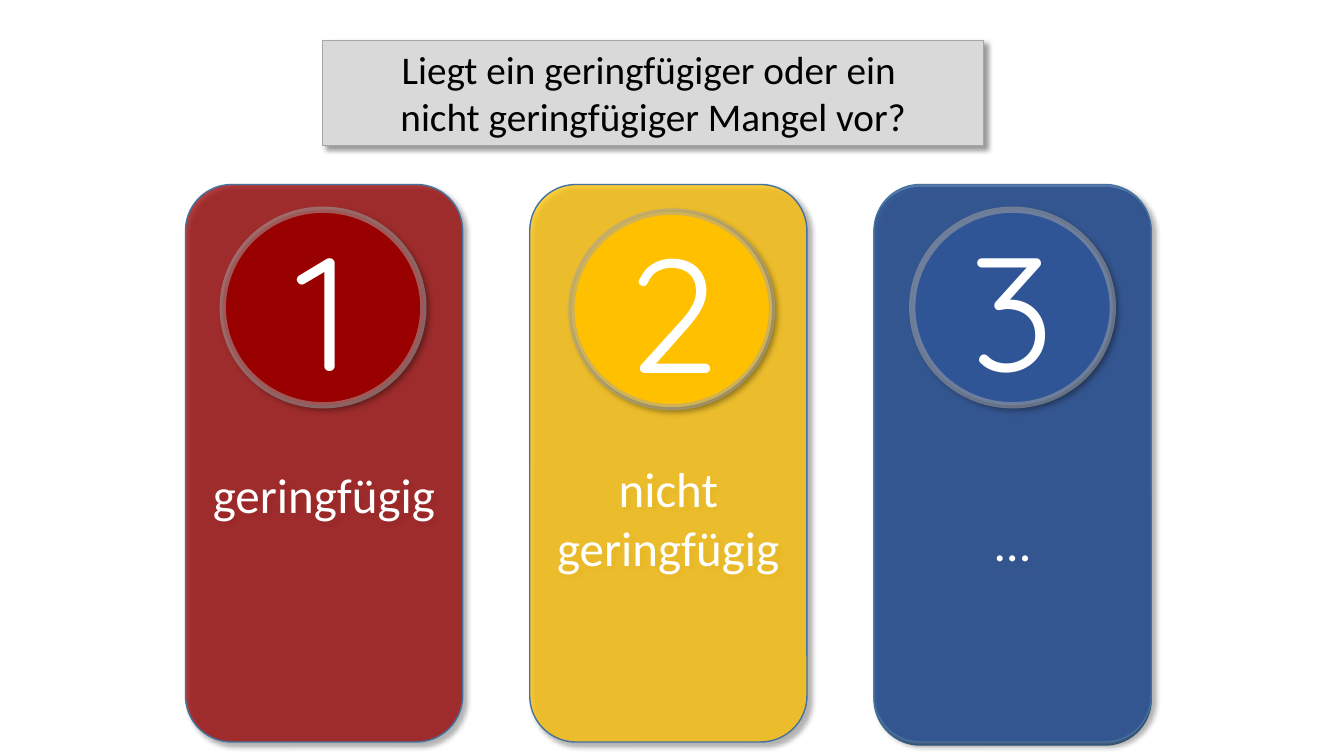
from lxml import etree
from pptx import Presentation
from pptx.dml.color import RGBColor
from pptx.enum import shapes, text
from pptx.oxml import ns
from pptx.util import Pt

# Content: fill, label, size, space above label, circle left, circle top
TITLE = "Liegt ein geringfügiger oder ein \vnicht geringfügiger Mangel vor?"
CARDS = [
    ("990000", "geringfügig", 35, 190, 159.1, 149.8),
    ("FFC000", "nicht geringfügig", 35, 186, 408.2, 151.2),
    ("2F5597", "…", 36, 224, 651.6, 149.8),
]
LEFT, TOP, WIDE, HIGH, STEP = 132.5, 131.8, 198, 398.2, 245.9
KIND = shapes.MSO_SHAPE

deck = Presentation()
deck.slide_width, deck.slide_height = Pt(960), Pt(540)
slide = deck.slides.add_slide(deck.slide_layouts[6])


def color(code):
    return RGBColor.from_string(code)


def fade(part, share):
    """Set the opacity, in percent, of the colour inside part."""
    tone = next(part.iter(ns.qn("a:srgbClr")))
    etree.SubElement(tone, ns.qn("a:alpha"), val=str(share * 1000))


def shade(shape):
    """Add a soft shadow to the lower right."""
    box = shape._element.spPr.find(ns.qn("a:effectLst"))
    drop = etree.SubElement(
        box, ns.qn("a:outerShdw"), blurRad=str(Pt(4)), dist=str(Pt(3)),
        dir="2700000", algn="tl", rotWithShape="0")
    etree.SubElement(drop, ns.qn("a:srgbClr"), val="000000")
    fade(drop, 40)


def draw(kind, place, fill, line, width, shadow=True):
    shape = slide.shapes.add_shape(kind, *map(Pt, place))
    shape.shadow.inherit = False
    shape.fill.solid()
    shape.fill.fore_color.rgb = color(fill)
    shape.line.color.rgb = color(line)
    shape.line.width = Pt(width)
    if shadow:
        shade(shape)
    return shape


def write(shape, words, size, face="Calibri", tint="FFFFFF"):
    frame = shape.text_frame
    frame.word_wrap = True
    frame.vertical_anchor = text.MSO_ANCHOR.MIDDLE
    para = frame.paragraphs[0]
    para.text = words
    para.alignment = text.PP_ALIGN.CENTER
    para.font.size, para.font.name = Pt(size), face
    para.font.color.rgb = color(tint)
    return frame


def card(left, top, fill, shadow=True):
    shape = draw(KIND.ROUNDED_RECTANGLE, (left, top, WIDE, HIGH),
                 fill, "43739E", 1, shadow)
    fade(shape.fill._xPr.find(ns.qn("a:solidFill")), 75)
    return shape


# Second layer behind the last card
card(LEFT + 2 * STEP, TOP + 2.2, CARDS[-1][0], shadow=False)

# Cards with numbered circles
for i, (fill, label, size, gap, x, y) in enumerate(CARDS):
    frame = write(card(LEFT + i * STEP, TOP, fill), label, size)
    frame.vertical_anchor = text.MSO_ANCHOR.TOP
    frame.margin_top = Pt(gap)

    disc = draw(KIND.OVAL, (x, y, 143.3, 139.7), fill, "A6A6A6", 4.5)
    fade(disc.line._ln, 53)
    write(disc, str(i + 1), 115, "Quicksand")

# Question
head = draw(KIND.RECTANGLE, (230.4, 28.8, 472.3, 74.9),
            "D9D9D9", "A6A6A6", 0.75)
write(head, TITLE, 28, tint="000000")

deck.save("out.pptx")
